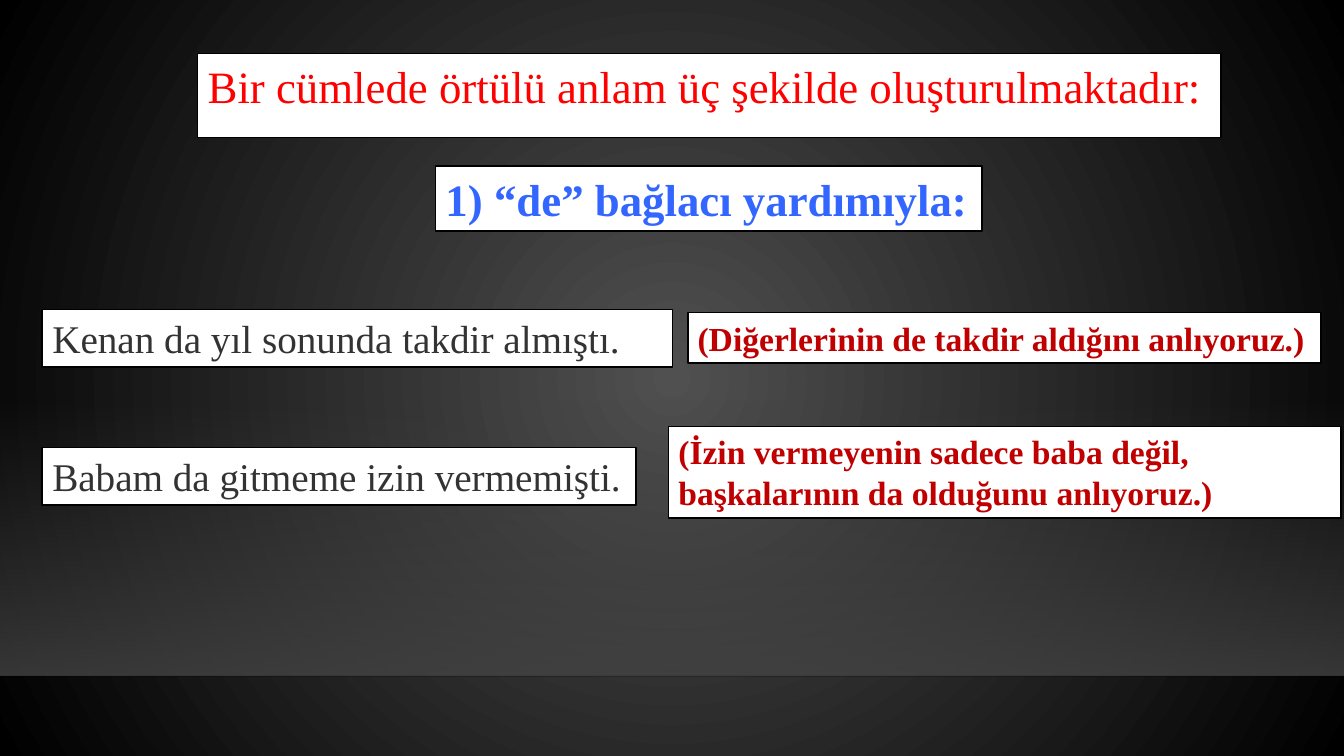
import lxml.etree
import pptx
import pptx.dml.color
import pptx.enum.shapes
import pptx.enum.text
import pptx.oxml.ns
import pptx.util

Inches = pptx.util.Inches
qn = pptx.oxml.ns.qn

COLORS = {
    "glow": "505050",
    "black": "000000",
    "floor": "454545",
    "edge": "000001",
    "white": "FFFFFF",
    "heading": "FF0000",
    "rule": "3366FF",
    "example": "333333",
    "meaning": "C00000",
}


def rgb(name):
    return pptx.dml.color.RGBColor.from_string(COLORS[name])


def write_text(frame, text, size, color, bold=False, wrap=False):
    """Put one left-aligned paragraph into a text frame."""
    frame.word_wrap = wrap
    frame.auto_size = pptx.enum.text.MSO_AUTO_SIZE.SHAPE_TO_FIT_TEXT
    frame.vertical_anchor = pptx.enum.text.MSO_ANCHOR.TOP
    paragraph = frame.paragraphs[0]
    paragraph.alignment = pptx.enum.text.PP_ALIGN.LEFT
    run = paragraph.add_run()
    run.text = text
    run.font.name = "Times New Roman"
    run.font.size = pptx.util.Pt(size)
    run.font.bold = bold
    run.font.color.rgb = rgb(color)


def set_opacity(color_element, percent):
    alpha = lxml.etree.SubElement(color_element, qn("a:alpha"))
    alpha.set("val", str(percent * 1000))


class SlideBuilder:
    def __init__(self, deck):
        self.slide = deck.slides.add_slide(deck.slide_layouts[5])
        self.border = pptx.util.Pt(1.25)

    def gradient(self, fill, start, end):
        fill.gradient()
        for stop, name in zip(fill.gradient_stops, (start, end)):
            stop.color.rgb = rgb(name)

    def background(self, center, rim):
        self.gradient(self.slide.background.fill, center, rim)
        grad = self.slide._element.xpath(".//p:bg//a:gradFill")[0]
        grad.remove(grad.find(qn("a:lin")))
        circle = lxml.etree.SubElement(grad, qn("a:path"))
        circle.set("path", "circle")
        focus = lxml.etree.SubElement(circle, qn("a:fillToRect"))
        for side in "ltrb":
            focus.set(side, "50000")

    def band(self, left, top, width, height, color, opacities):
        band = self.slide.shapes.add_shape(
            pptx.enum.shapes.MSO_SHAPE.RECTANGLE,
            Inches(left), Inches(top), Inches(width), Inches(height))
        band.shadow.inherit = False
        band.line.fill.background()
        self.gradient(band.fill, color, color)
        band.fill.gradient_angle = 270
        stops = band._element.xpath(".//a:gs/a:srgbClr")
        for stop, opacity in zip(stops, opacities):
            set_opacity(stop, opacity)

    def line(self, left, right, y, color, opacity):
        edge = self.slide.shapes.add_connector(
            pptx.enum.shapes.MSO_CONNECTOR.STRAIGHT,
            Inches(left), Inches(y), Inches(right), Inches(y))
        edge.line.color.rgb = rgb(color)
        edge.line.width = pptx.util.Pt(1)
        set_opacity(edge._element.xpath(".//a:ln//a:srgbClr")[0], opacity)
        lxml.etree.SubElement(edge._element.spPr, qn("a:effectLst"))

    def frame(self, shape):
        shape.fill.solid()
        shape.fill.fore_color.rgb = rgb("white")
        shape.line.color.rgb = rgb("black")
        shape.line.width = self.border

    def title(self, left, top, width, height, text, **style):
        heading = self.slide.shapes.title
        heading.left, heading.top = Inches(left), Inches(top)
        heading.width, heading.height = Inches(width), Inches(height)
        self.frame(heading)
        write_text(heading.text_frame, text, **style)

    def label(self, left, top, width, height, text, **style):
        label = self.slide.shapes.add_textbox(
            Inches(left), Inches(top), Inches(width), Inches(height))
        self.frame(label)
        write_text(label.text_frame, text, **style)


def main():
    deck = pptx.Presentation()
    deck.slide_width, deck.slide_height = Inches(13.33), Inches(7.5)
    page = SlideBuilder(deck)

    # Backdrop with a lit floor
    page.background("glow", "black")
    page.band(0, 3.96, 13.33, 2.74, "floor", (0, 80))
    page.line(0, 13.33, 6.71, "edge", 20)

    # Heading and rule
    page.title(1.96, 0.53, 10.15, 0.64,
               "Bir cümlede örtülü anlam üç şekilde oluşturulmaktadır:",
               size=32, color="heading")
    page.label(4.32, 1.65, 5.42, 0.64, "1) “de” bağlacı yardımıyla:",
               size=32, color="rule", bold=True)

    # Example sentences, each with its implied meaning
    example = {"size": 28, "color": "example"}
    meaning = {"size": 24, "color": "meaning", "bold": True}
    page.label(0.42, 3.07, 6.25, 0.57, "Kenan da yıl sonunda takdir almıştı.",
               wrap=True, **example)
    page.label(6.82, 3.1, 6.28, 0.5,
               "(Diğerlerinin de takdir aldığını anlıyoruz.)", **meaning)
    page.label(0.42, 4.44, 5.89, 0.57, "Babam da gitmeme izin vermemişti.",
               **example)
    page.label(6.63, 4.23, 6.67, 0.91,
               "(İzin vermeyenin sadece baba değil, "
               "başkalarının da olduğunu anlıyoruz.)", wrap=True, **meaning)

    deck.save("out.pptx")


if __name__ == "__main__":
    main()
